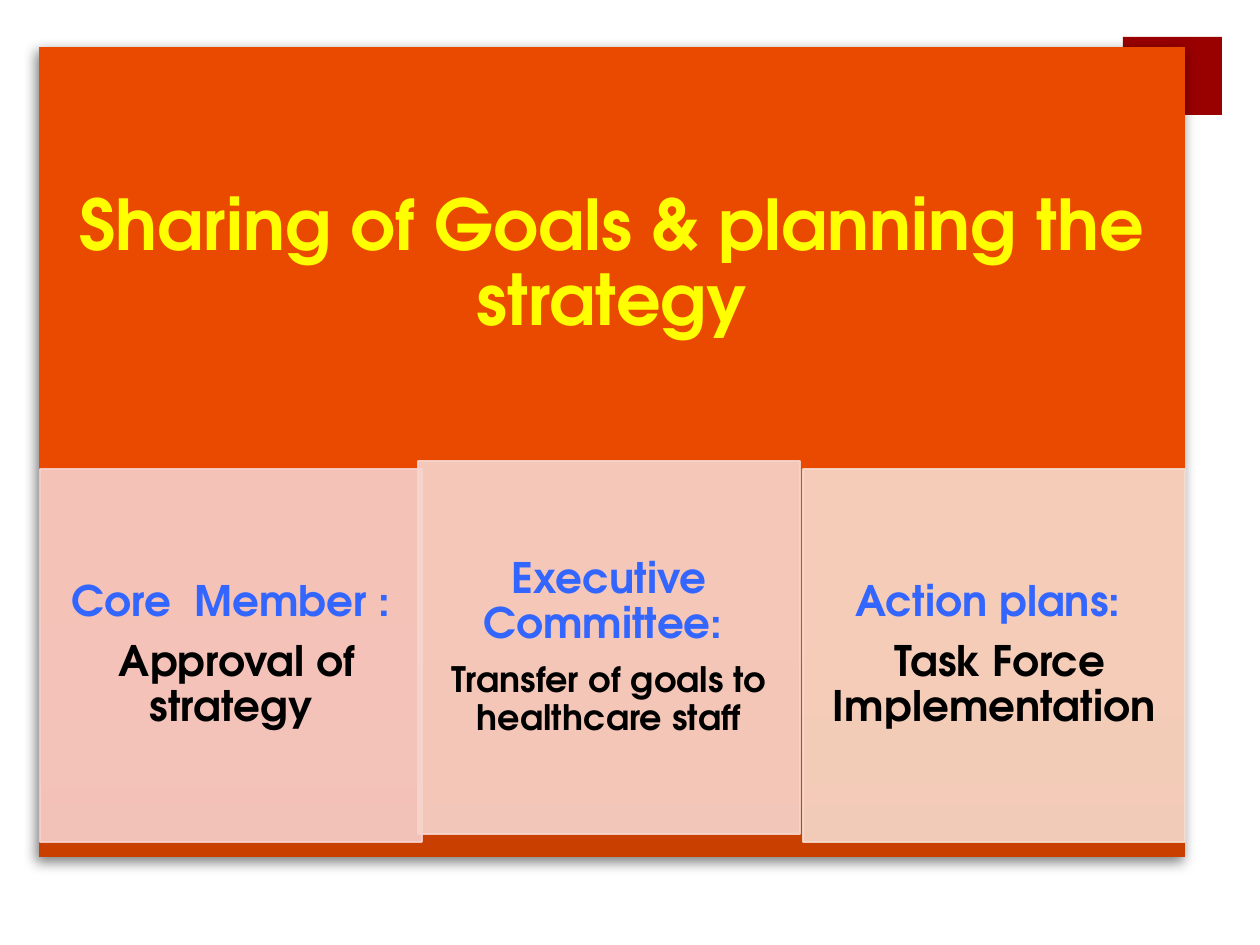
"""Build the slide on sharing goals and planning the strategy."""
from lxml import etree
from pptx import Presentation
from pptx.dml.color import RGBColor
from pptx.enum.shapes import MSO_SHAPE
from pptx.enum.text import MSO_ANCHOR, PP_ALIGN
from pptx.oxml.ns import qn
from pptx.util import Pt

PX = 914400 / 126
RECT = MSO_SHAPE.RECTANGLE
MIDDLE = MSO_ANCHOR.MIDDLE
CENTER = PP_ALIGN.CENTER
FONT = "TeX Gyre Adventor"
COLORS = {
    "tab": "990000", "panel": "E94A00", "panel_dark": "C83F00",
    "title": "FFFF00", "heading": "3366FF", "body": "000000",
    "core": "F7D0CC", "executive": "F7D5CC", "action": "F7DBCC",
}
CARD_W, CARD_H = 382, 373
CARDS = [
    ("core", 40, 469, "Core  Member :", " Approval of strategy", 24),
    ("executive", 418, 461, "Executive Committee: ",
     "Transfer of goals to healthcare staff", 20),
    ("action", 803, 469, "Action plans: ", " Task Force Implementation", 24),
]


def add_rect(x, y, w, h, color):
    sp = s.shapes.add_shape(RECT, *[round(v * PX) for v in (x, y, w, h)])
    sp.shadow.inherit = False
    sp.fill.solid()
    sp.fill.fore_color.rgb = RGBColor.from_string(COLORS[color])
    sp.line.fill.background()
    return sp


def write(sp, margin_x, margin_y, lines):
    tf = sp.text_frame
    frame = {"word_wrap": True, "vertical_anchor": MIDDLE,
             "margin_left": margin_x, "margin_right": margin_x,
             "margin_top": margin_y, "margin_bottom": margin_y}
    for name, value in frame.items():
        setattr(tf, name, round(value * PX) if "margin" in name else value)
    for i, (text, size, color) in enumerate(lines):
        p = tf.add_paragraph() if i else tf.paragraphs[0]
        for name, value in {"alignment": CENTER, "line_spacing": 0.9,
                            "space_after": Pt(size * 0.35)}.items():
            setattr(p, name, value)
        r = p.add_run()
        r.text = text
        for name, value in {"name": FONT, "size": Pt(size), "bold": True}.items():
            setattr(r.font, name, value)
        r.font.color.rgb = RGBColor.from_string(COLORS[color])


prs = Presentation()
prs.slide_width, prs.slide_height = round(1260 * PX), round(945 * PX)
s = prs.slides.add_slide(prs.slide_layouts[6])

add_rect(1123, 37, 99, 78, "tab")

panel = add_rect(39, 47, 1146, 810, "panel")
panel.fill.gradient()
panel.fill.gradient_angle = 90
for stop, position, color in zip(panel.fill.gradient_stops, (0, 0.35),
                                 ("panel_dark", "panel")):
    stop.position = position
    stop.color.rgb = RGBColor.from_string(COLORS[color])
effects = panel._element.spPr.find(qn("a:effectLst"))
shadow = etree.SubElement(effects, qn("a:outerShdw"), blurRad=str(Pt(7)),
                          dist=str(Pt(3)), dir="6600000", rotWithShape="0")
tone = etree.SubElement(shadow, qn("a:srgbClr"), val=COLORS["body"])
etree.SubElement(tone, qn("a:alpha"), val="50000")

title = s.shapes.add_textbox(*[round(v * PX) for v in (39, 47, 1146, 437)])
write(title, 39, 39, [("Sharing of Goals & planning the strategy", 40, "title")])

for color, x, y, heading, body, size in CARDS:
    sp = add_rect(x, y, CARD_W, CARD_H, color)
    sp.line.width = Pt(1)
    sp.line.color.rgb = RGBColor.from_string(COLORS[color])
    for node in list(sp._element.spPr.iter(qn("a:srgbClr"))):
        etree.SubElement(node, qn("a:alpha"), val="90000")
    write(sp, 24, 4, [(heading, 24, "heading"), (body, size, "body")])

prs.save("out.pptx")
